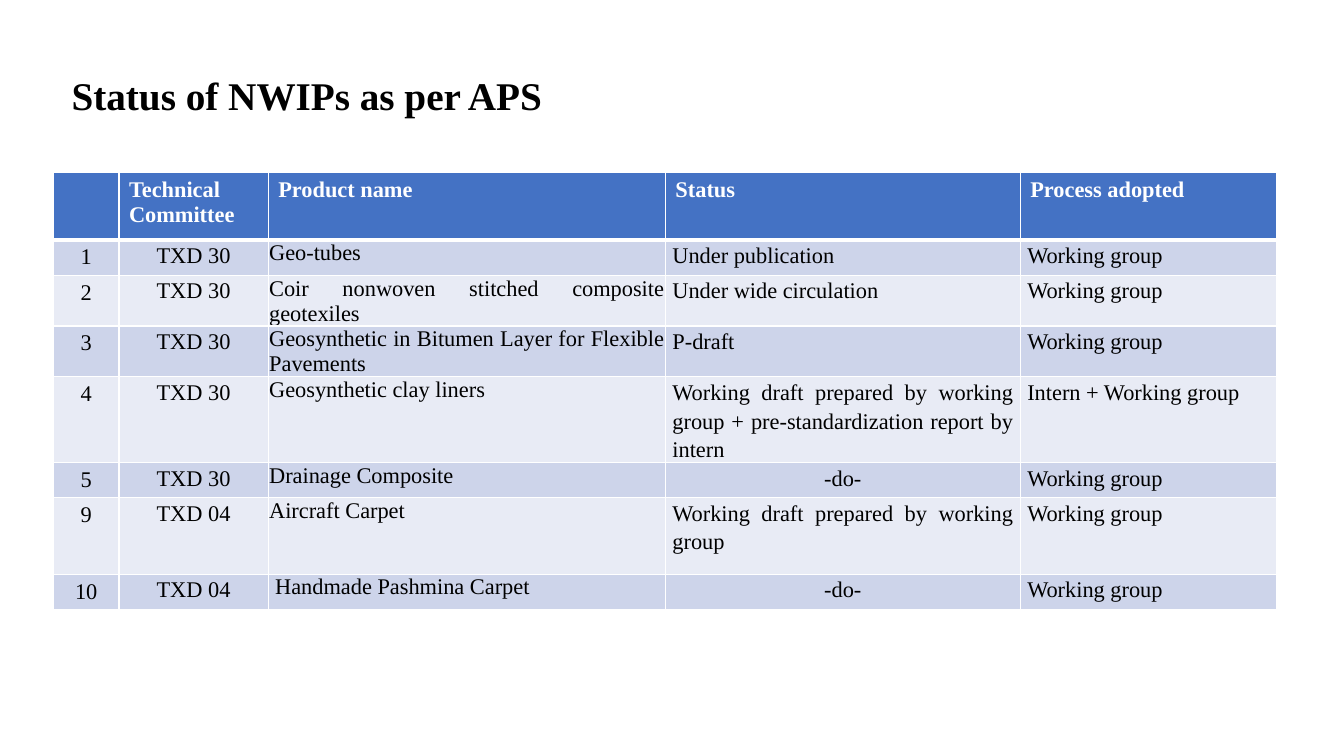
from lxml import etree
from pptx import Presentation
from pptx.dml.color import RGBColor
from pptx.enum.text import MSO_ANCHOR, PP_ALIGN
from pptx.oxml.ns import qn
from pptx.util import Inches, Pt

LEFT, CENTER, JUSTIFY = PP_ALIGN.LEFT, PP_ALIGN.CENTER, PP_ALIGN.JUSTIFY
MIDDLE = MSO_ANCHOR.MIDDLE

FONT = "Times New Roman"
WHITE, BLACK = "FFFFFF", "000000"
HEADER_FILL, BANDS = "4472C4", ("CDD4EA", "E8EBF5")
TITLE = "Status of NWIPs as per APS"
HEADER = ("", "Technical Committee", "Product name", "Status", "Process adopted")
ROWS = [
    ("1", "TXD 30", "Geo-tubes", "Under publication", "Working group"),
    ("2", "TXD 30", "Coir nonwoven stitched composite geotexiles",
     "Under wide circulation", "Working group"),
    ("3", "TXD 30", "Geosynthetic in Bitumen Layer for Flexible Pavements",
     "P-draft", "Working group"),
    ("4", "TXD 30", "Geosynthetic clay liners",
     "Working draft prepared by working group + pre-standardization report by intern",
     "Intern + Working group"),
    ("5", "TXD 30", "Drainage Composite", "-do-", "Working group"),
    ("9", "TXD 04", "Aircraft Carpet ",
     "Working draft prepared by working group", "Working group"),
    ("10", "TXD 04", "Handmade Pashmina Carpet ", "-do-", "Working group"),
]
COL_WIDTHS = (0.65, 1.48, 3.94, 3.52, 2.54)
ROW_HEIGHTS = (0.67, 0.35, 0.48, 0.48, 0.79, 0.34, 0.76, 0.34)
WIDE, MEDIUM, TIGHT = (0.1, 0.05, 0.1, 0.05), (0.07, 0, 0.07, 0), (0.01, 0.01, 0.01, 0)
COL_FORMATS = (
    (CENTER, 1, WIDE),
    (CENTER, 1.15, MEDIUM),
    (JUSTIFY, 1, TIGHT),
    (JUSTIFY, 1.15, MEDIUM),
    (LEFT, 1.15, MEDIUM),
)


def rgb(value):
    return RGBColor.from_string(value)


def write(tf, text, size=16, color=BLACK, bold=False, align=LEFT, spacing=1):
    p = tf.paragraphs[0]
    p.alignment, p.line_spacing = align, spacing
    r = p.add_run()
    r.text = text
    r.font.name, r.font.size, r.font.bold = FONT, Pt(size), bold
    r.font.color.rgb = rgb(color)


def set_insets(box, insets):
    box.margin_left, box.margin_top, box.margin_right, box.margin_bottom = map(Inches, insets)


def set_borders(cell, top, bottom):
    tc_pr = cell._tc.get_or_add_tcPr()
    for i, (side, width) in enumerate((("L", 1), ("R", 1), ("T", top), ("B", bottom))):
        ln = etree.Element(qn(f"a:ln{side}"), w=str(Pt(width)))
        fill = etree.SubElement(ln, qn("a:solidFill"))
        etree.SubElement(fill, qn("a:srgbClr"), val=WHITE)
        tc_pr.insert(i, ln)


def format_cell(cell, text, row, col):
    align, spacing, insets = COL_FORMATS[col]
    color, bold, fill = BLACK, False, BANDS[(row - 1) % 2]
    if row == 0:
        align, spacing, insets = JUSTIFY, 1, WIDE
        color, bold, fill = WHITE, True, HEADER_FILL
    elif text == "-do-":
        align = CENTER
    elif text.startswith("Handmade"):
        insets = MEDIUM
    set_insets(cell, insets)
    cell.fill.solid()
    cell.fill.fore_color.rgb = rgb(fill)
    set_borders(cell, top=3 if row == 1 else 1, bottom=3 if row == 0 else 1)
    if text:
        write(cell.text_frame, text, color=color, bold=bold, align=align, spacing=spacing)


def main():
    prs = Presentation()
    prs.slide_width, prs.slide_height = Inches(13.33), Inches(7.5)
    s = prs.slides.add_slide(prs.slide_layouts[5])

    title = s.shapes.title
    title.left, title.top, title.width, title.height = map(Inches, (0.61, 0.53, 12.05, 0.89))
    tf = title.text_frame
    tf.word_wrap, tf.vertical_anchor = True, MIDDLE
    set_insets(tf, WIDE)
    write(tf, TITLE, size=28, bold=True, spacing=0.9)

    table = s.shapes.add_table(
        len(ROW_HEIGHTS), len(COL_WIDTHS), Inches(0.53), Inches(1.71),
        Inches(sum(COL_WIDTHS)), Inches(sum(ROW_HEIGHTS))).table
    for column, width in zip(table.columns, COL_WIDTHS):
        column.width = Inches(width)
    for row, height in zip(table.rows, ROW_HEIGHTS):
        row.height = Inches(height)
    for i, texts in enumerate([HEADER, *ROWS]):
        for j, text in enumerate(texts):
            format_cell(table.cell(i, j), text, i, j)

    prs.save("out.pptx")


if __name__ == "__main__":
    main()
